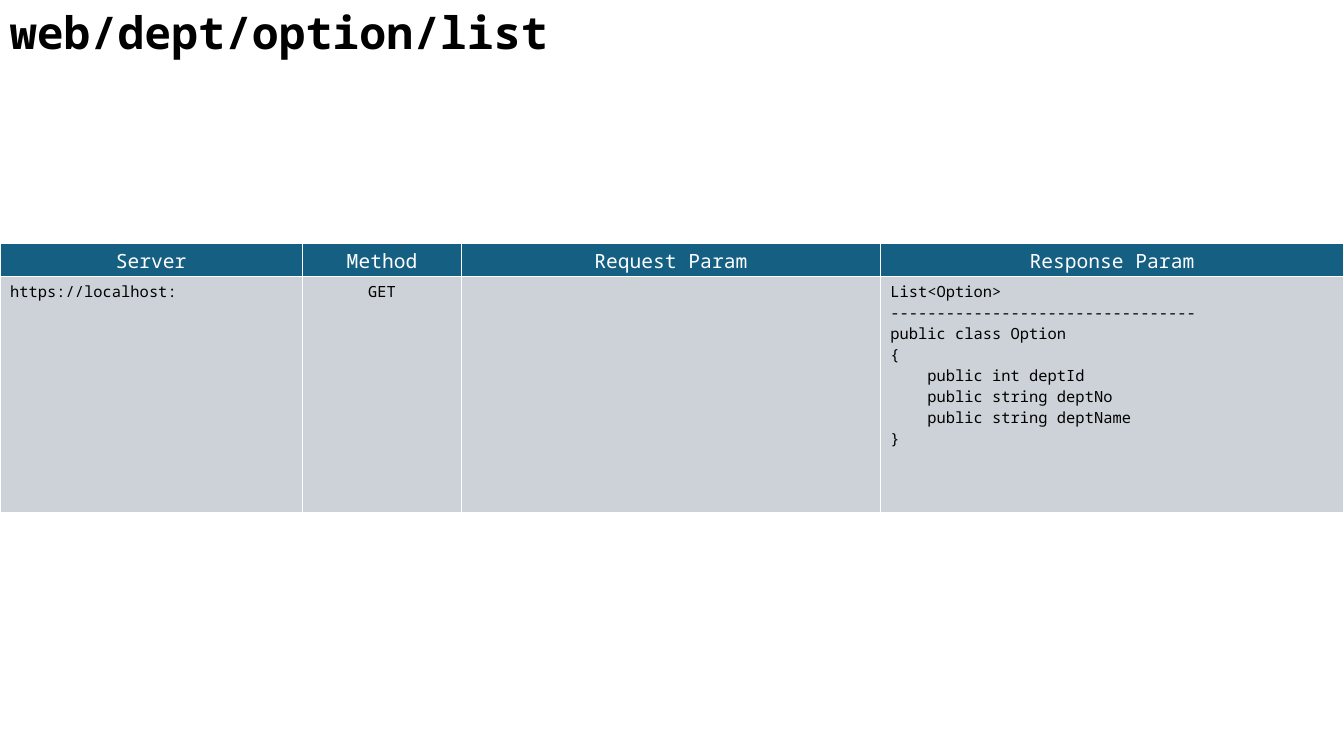
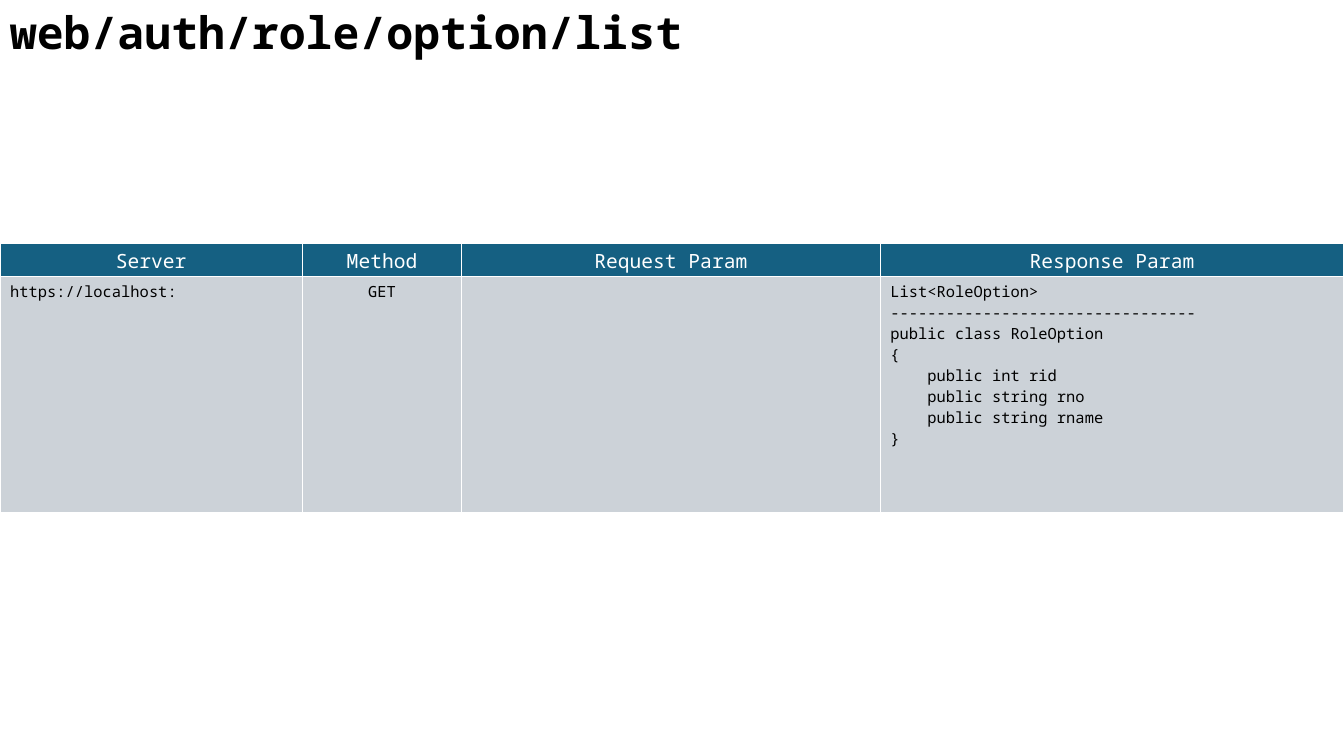
from dataclasses import dataclass

from lxml import etree
from pptx import Presentation, util as u
from pptx.dml import color
from pptx.enum import text
from pptx.oxml import ns


@dataclass(frozen=True)
class Theme:
    font: str = "Noto Sans Mono"
    ink: str = "000000"
    white: str = "FFFFFF"
    head: str = "156082"
    body: str = "CCD2D8"
    title: int = 32
    label: int = 14
    code: int = 11
    rule: int = 1


T = Theme()
WIDE, HIGH = u.Inches(13.33), u.Inches(7.5)
COLS = (3, 1.58, 4.15, 4.6)
ROWS = (0.33, 2.35)
TOP = 2.41
HEADS = ("Server", "Method", "Request Param", "Response Param")
HOST = "https://localhost:"
MID = text.PP_ALIGN.CENTER
LEFT = text.PP_ALIGN.LEFT

PAGES = (
    ("web/dept/option/list", "Option",
     ("int deptId", "string deptNo", "string deptName")),
    ("web/auth/role/option/list", "RoleOption",
     ("int rid", "string rno", "string rname")),
)


def rgb(tone):
    return color.RGBColor.from_string(tone)


def write(frame, lines, size, tone, align=LEFT, bold=False):
    for i, line in enumerate(lines):
        para = frame.add_paragraph() if i else frame.paragraphs[0]
        para.alignment = align
        run = para.add_run()
        run.text = line
        font = run.font
        font.name, font.size, font.bold = T.font, u.Pt(size), bold
        font.color.rgb = rgb(tone)


def edge(cell):
    props = cell._tc.get_or_add_tcPr()
    for side in "LRTB":
        line = etree.SubElement(props, ns.qn("a:ln" + side), w=str(u.Pt(T.rule)))
        fill = etree.SubElement(line, ns.qn("a:solidFill"))
        etree.SubElement(fill, ns.qn("a:srgbClr"), val=T.white)


def paint(cell, lines, size, tone, back, align):
    edge(cell)
    cell.fill.solid()
    cell.fill.fore_color.rgb = rgb(back)
    write(cell.text_frame, lines, size, tone, align)


def title(slide, name):
    box = slide.shapes.add_textbox(0, 0, int(WIDE * 0.71), u.Inches(0.64))
    frame = box.text_frame
    frame.word_wrap = True
    frame.auto_size = text.MSO_AUTO_SIZE.SHAPE_TO_FIT_TEXT
    write(frame, [name], T.title, T.ink, bold=True)


def reply(kind, fields):
    return [f"List<{kind}>", "-" * 33, f"public class {kind}", "{",
            *(f"    public {field}" for field in fields), "}"]


def grid(slide, code):
    table = slide.shapes.add_table(
        len(ROWS), len(COLS), 0, u.Inches(TOP), WIDE, u.Inches(sum(ROWS))).table
    for col, part in zip(table.columns, COLS):
        col.width = int(WIDE * part / sum(COLS))
    for row, tall in zip(table.rows, ROWS):
        row.height = u.Inches(tall)
    for i, name in enumerate(HEADS):
        cell = table.cell(0, i)
        cell.margin_bottom = u.Inches(0.01)
        paint(cell, [name], T.label, T.white, T.head, MID)
    data = (([HOST], LEFT), (["GET"], MID), ([], LEFT), (code, LEFT))
    for i, (lines, align) in enumerate(data):
        paint(table.cell(1, i), lines, T.code, T.ink, T.body, align)


def main():
    deck = Presentation()
    deck.slide_width, deck.slide_height = WIDE, HIGH
    for name, kind, fields in PAGES:
        slide = deck.slides.add_slide(deck.slide_layouts[6])
        title(slide, name)
        grid(slide, reply(kind, fields))
    deck.save("out.pptx")


if __name__ == "__main__":
    main()
